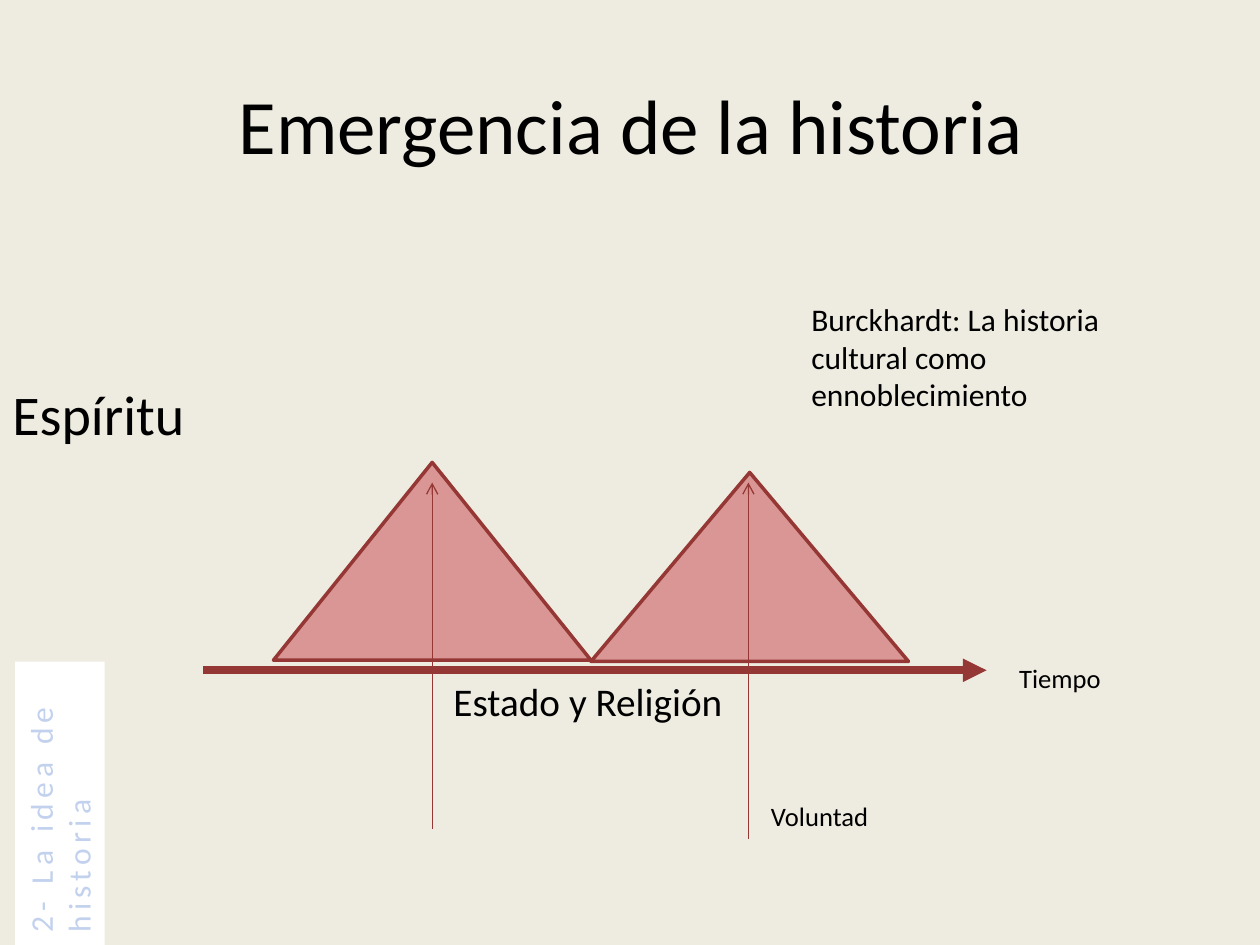
from pptx import Presentation
from pptx.dml.color import RGBColor
from pptx.enum.shapes import MSO_CONNECTOR as Connector, MSO_SHAPE as Shape
from pptx.enum.text import MSO_ANCHOR as Anchor, PP_ALIGN as Align
from pptx.oxml.ns import qn
from pptx.util import Inches, Pt
from lxml.etree import SubElement

COLORS = {"background": "EEECE1", "text": "000000", "peak": "D99694",
          "line": "953735", "label": "FFFFFF", "label_text": "C2D1ED"}


class SlideBuilder:
    """Holds the style and the current slide, and draws its elements."""

    def __init__(self, page, font="Calibri"):
        self.page = page
        self.font = font
        page.background.fill.solid()
        page.background.fill.fore_color.rgb = self.color("background")

    def color(self, name):
        return RGBColor.from_string(COLORS[name])

    def set_text(self, shape, words, size, color="text", align=Align.LEFT, spacing=None):
        frame = shape.text_frame
        frame.word_wrap = True
        para = frame.paragraphs[0]
        para.text = words
        para.alignment = align
        para.line_spacing = spacing
        para.font.name = self.font
        para.font.size = Pt(size)
        para.font.color.rgb = self.color(color)
        return para

    def text(self, words, left, top, width, height, size,
             align=Align.LEFT, anchor=Anchor.TOP, spacing=None):
        box = self.page.shapes.add_textbox(*map(Inches, (left, top, width, height)))
        box.text_frame.vertical_anchor = anchor
        self.set_text(box, words, size, align=align, spacing=spacing)

    def shape(self, kind, left, top, width, height, fill):
        shape = self.page.shapes.add_shape(kind, *map(Inches, (left, top, width, height)))
        shape.shadow.inherit = False
        shape.fill.solid()
        shape.fill.fore_color.rgb = self.color(fill)
        shape.line.fill.background()
        return shape

    def peak(self, left, top, width, height):
        peak = self.shape(Shape.ISOSCELES_TRIANGLE, left, top, width, height, "peak")
        peak.line.color.rgb = self.color("line")
        peak.line.width = Pt(2)

    def arrow(self, start, end, weight, head):
        arrow = self.page.shapes.add_connector(Connector.STRAIGHT, *map(Inches, start + end))
        arrow.line.color.rgb = self.color("line")
        arrow.line.width = Pt(weight)
        properties = arrow._element.spPr
        SubElement(properties.find(qn("a:ln")), qn("a:tailEnd"), type=head)
        SubElement(properties, qn("a:effectLst"))

    def side_label(self, words, left, top, width, height, size):
        label = self.shape(Shape.RECTANGLE, left, top, width, height, "label")
        label.rotation = 270
        label.text_frame.vertical_anchor = Anchor.TOP
        para = self.set_text(label, words, size, "label_text")
        for span in para.runs:
            span._r.get_or_add_rPr().set("spc", "300")


def main():
    deck = Presentation()
    deck.slide_width, deck.slide_height = Inches(10), Inches(7.5)
    builder = SlideBuilder(deck.slides.add_slide(deck.slide_layouts[6]))

    builder.text("Espíritu", 0, 2.96, 1.73, 0.63, 32)
    builder.arrow((1.61, 5.32), (7.83, 5.32), 4.5, "triangle")
    builder.peak(2.17, 3.67, 2.52, 1.57)
    builder.peak(4.69, 3.75, 2.52, 1.5)
    builder.text("Estado y Religión", 3.5, 5.4, 2.45, 0.66, 22.4, spacing=0.8)
    builder.text("Tiempo", 7.99, 5.25, 1.18, 0.31, 15.2, spacing=0.8)
    for center, bottom in ((3.43, 6.58), (5.94, 6.66)):
        builder.arrow((center, bottom), (center, 3.83), 0.75, "arrow")
    builder.text("Voluntad", 6.02, 6.35, 1.18, 0.31, 15.2, spacing=0.8)
    builder.text("Burckhardt: La historia cultural como ennoblecimiento",
                 6.34, 2.33, 2.68, 1.01, 18)
    builder.text("Emergencia de la historia", 0.51, 0.36, 9, 1.25, 44,
                 Align.CENTER, Anchor.MIDDLE)
    builder.side_label("2- La idea de historia", -0.65, 6.02, 2.25, 0.71, 18)
    deck.save("out.pptx")


if __name__ == "__main__":
    main()
